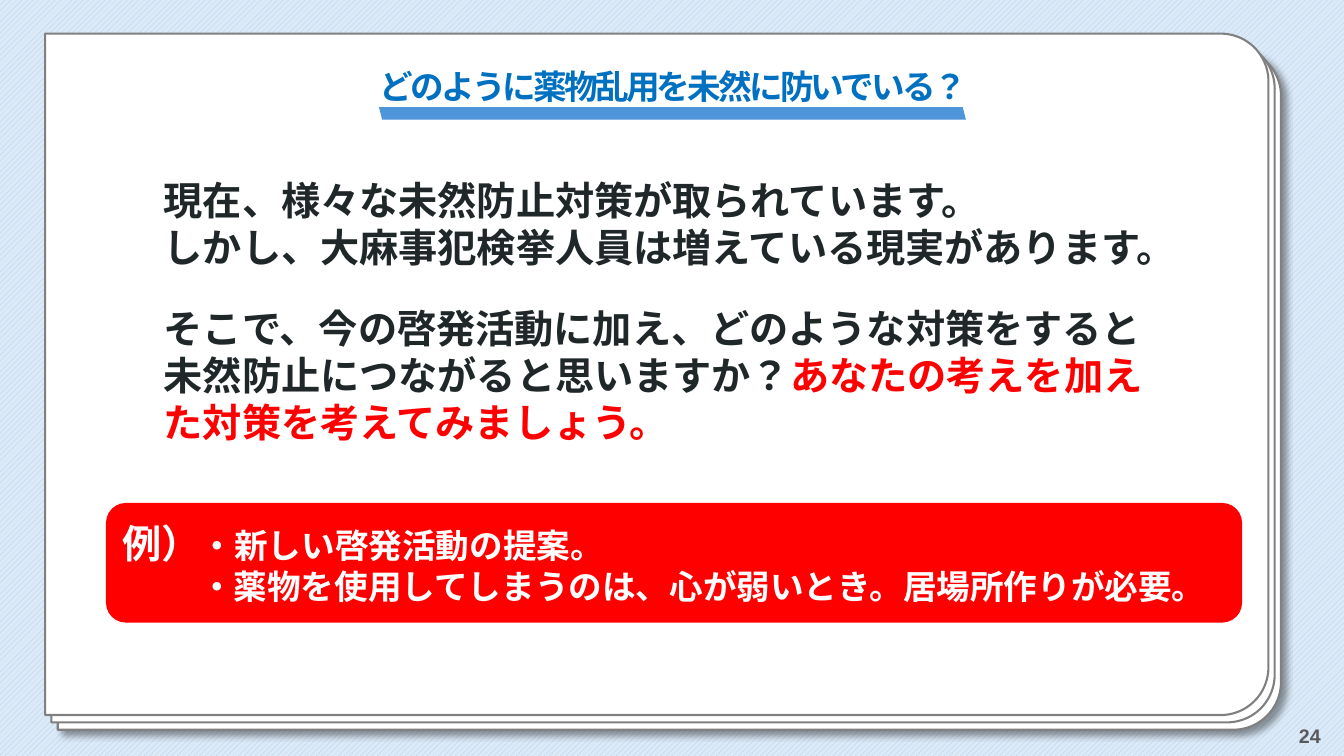
from dataclasses import dataclass

from lxml.etree import SubElement
from pptx import Presentation
from pptx.dml.color import RGBColor
from pptx.enum.dml import MSO_PATTERN
from pptx.enum.lang import MSO_LANGUAGE_ID as LANG
from pptx.enum.shapes import MSO_SHAPE as SHAPE
from pptx.enum.text import MSO_ANCHOR as ANCHOR, MSO_AUTO_SIZE as AUTO, PP_ALIGN as ALIGN
from pptx.oxml.ns import qn
from pptx.util import Emu, Pt

PX = 9525
JP_FONT = "Noto Sans CJK JP"
RED, WHITE, INK = "FF0000", "FFFFFF", "202729"


@dataclass
class Box:
    """Frame of an element in px."""
    x: int
    y: int
    w: int
    h: int


@dataclass
class Piece:
    """Stretch of text; newlines are line breaks, blanks take the paragraph's font."""
    text: str
    color: str = ""
    size: int = 0


@dataclass
class Para:
    """Paragraph with its font and spacing."""
    pieces: list[Piece]
    size: int
    color: str
    font: str = "Arial"
    align: ALIGN = ALIGN.LEFT
    after: int = 0
    indent: int = 0
    tracking: int = 0


def px(n: int) -> Emu:
    """Turn px into EMU."""
    return Emu(n * PX)


def rgb(color: str) -> RGBColor:
    """Turn a hex string into a colour."""
    return RGBColor.from_string(color)


def place(sp, box: Box) -> None:
    """Move and size a shape."""
    sp.left, sp.top, sp.width, sp.height = px(box.x), px(box.y), px(box.w), px(box.h)


def add_shape(s, kind: SHAPE, box: Box, fill: str):
    """Add a flat shape without an outline."""
    sp = s.shapes.add_shape(kind, px(box.x), px(box.y), px(box.w), px(box.h))
    sp.shadow.inherit = False
    sp.fill.solid()
    sp.fill.fore_color.rgb = rgb(fill)
    sp.line.fill.background()
    return sp


def add_sheet(s, box: Box, shadow: bool) -> None:
    """Add one paper sheet with rounded right corners."""
    sp = add_shape(s, SHAPE.ROUND_2_SAME_RECTANGLE, box, WHITE)
    sp.rotation = 90
    sp.adjustments[0], sp.adjustments[1] = 0.07, 0
    sp.line.color.rgb = rgb("808080")
    sp.line.width = Pt(1.5)
    if shadow:
        effects = sp._element.spPr.find(qn("a:effectLst"))
        outer = SubElement(effects, qn("a:outerShdw"), blurRad=str(Pt(4)), dist=str(Pt(5)),
                           dir="2700000", algn="tl", rotWithShape="0")
        color = SubElement(outer, qn("a:srgbClr"), val="000000")
        SubElement(color, qn("a:alpha"), val="40000")


def write(sp, paras: list[Para], anchor: ANCHOR, auto: AUTO = AUTO.NONE,
          insets: tuple[int, int, int, int] = (10, 10, 10, 10)) -> None:
    """Fill a shape with paragraphs."""
    tf = sp.text_frame
    tf.word_wrap = True
    tf.auto_size = auto
    tf.vertical_anchor = anchor
    tf.margin_left, tf.margin_top, tf.margin_right, tf.margin_bottom = map(px, insets)
    for i, para in enumerate(paras):
        p = tf.add_paragraph() if i else tf.paragraphs[0]
        p.alignment = para.align
        p.space_after = Pt(para.after)
        pPr = p._p.get_or_add_pPr()
        pPr.set("marL", str(px(para.indent)))
        pPr.set("indent", "0")
        p.font.name = para.font
        p.font.size = Pt(para.size)
        p.font.bold = True
        p.font.color.rgb = rgb(para.color)
        p.font.language_id = LANG.JAPANESE
        rPr = pPr.find(qn("a:defRPr"))
        SubElement(rPr, qn("a:ea"), typeface=para.font)
        if para.tracking:
            rPr.set("spc", str(para.tracking * 100))
        for piece in para.pieces:
            for j, line in enumerate(piece.text.split("\n")):
                if j:
                    p.add_line_break()
                r = p.add_run()
                r.text = line
                if piece.color:
                    r.font.color.rgb = rgb(piece.color)
                if piece.size:
                    r.font.size = Pt(piece.size)


def main() -> None:
    """Build the slide."""
    prs = Presentation()
    prs.slide_width, prs.slide_height = px(1280), px(720)
    s = prs.slides.add_slide(prs.slide_layouts[5])
    bg = s.background.fill
    bg.patterned()
    bg.pattern = MSO_PATTERN.WIDE_UPWARD_DIAGONAL
    bg.fore_color.rgb, bg.back_color.rgb = rgb("A6CAEC"), rgb("DCEAF7")

    for i in range(3):
        add_sheet(s, Box(313 - 6 * i, -212 - 7 * i, 649, 1165), shadow=i == 0)

    title = s.shapes.title
    s.shapes._spTree.append(title._element)
    place(title, Box(295, 32, 692, 82))
    write(title, [Para([Piece("どのように薬物乱用を未然に防いでいる？")], 24, "0070C0",
                       JP_FONT, ALIGN.CENTER, tracking=-2)],
          ANCHOR.BOTTOM, insets=(10, 0, 10, 12))
    title.text_frame.paragraphs[0].line_spacing = 0.9

    number = s.shapes.add_textbox(px(980), px(682), px(288), px(38))
    write(number, [Para([Piece("24")], 14, "595959", align=ALIGN.RIGHT)],
          ANCHOR.MIDDLE, insets=(10, 5, 10, 5))

    body = add_shape(s, SHAPE.RECTANGLE, Box(146, 158, 989, 310), WHITE)
    write(body, [
        Para([Piece("現在、様々な未然防止対策が取られています。\n"
                    "しかし、大麻事犯検挙人員は増えている現実があります。")], 28, INK, after=24),
        Para([Piece("そこで、今の啓発活動に加え、どのような対策をすると\n"
                    "未然防止につながると思いますか？"),
              Piece("あなたの考えを加えた対策を考えてみましょう。", RED)], 28, INK, after=24),
    ], ANCHOR.TOP, AUTO.SHAPE_TO_FIT_TEXT)

    example = add_shape(s, SHAPE.ROUNDED_RECTANGLE, Box(101, 479, 1082, 114), RED)
    write(example, [
        Para([Piece("例）", size=28), Piece("・新しい啓発活動の提案。")], 24, WHITE),
        Para([Piece("・薬物を使用してしまうのは、心が弱いとき。居場所作りが必要。")], 24, WHITE, indent=74),
    ], ANCHOR.MIDDLE, AUTO.SHAPE_TO_FIT_TEXT)

    underline = add_shape(s, SHAPE.PARALLELOGRAM, Box(361, 102, 559, 12), "4E95D9")
    underline._element.spPr.find(qn("a:xfrm")).set("flipH", "1")
    prs.save("out.pptx")


if __name__ == "__main__":
    main()
